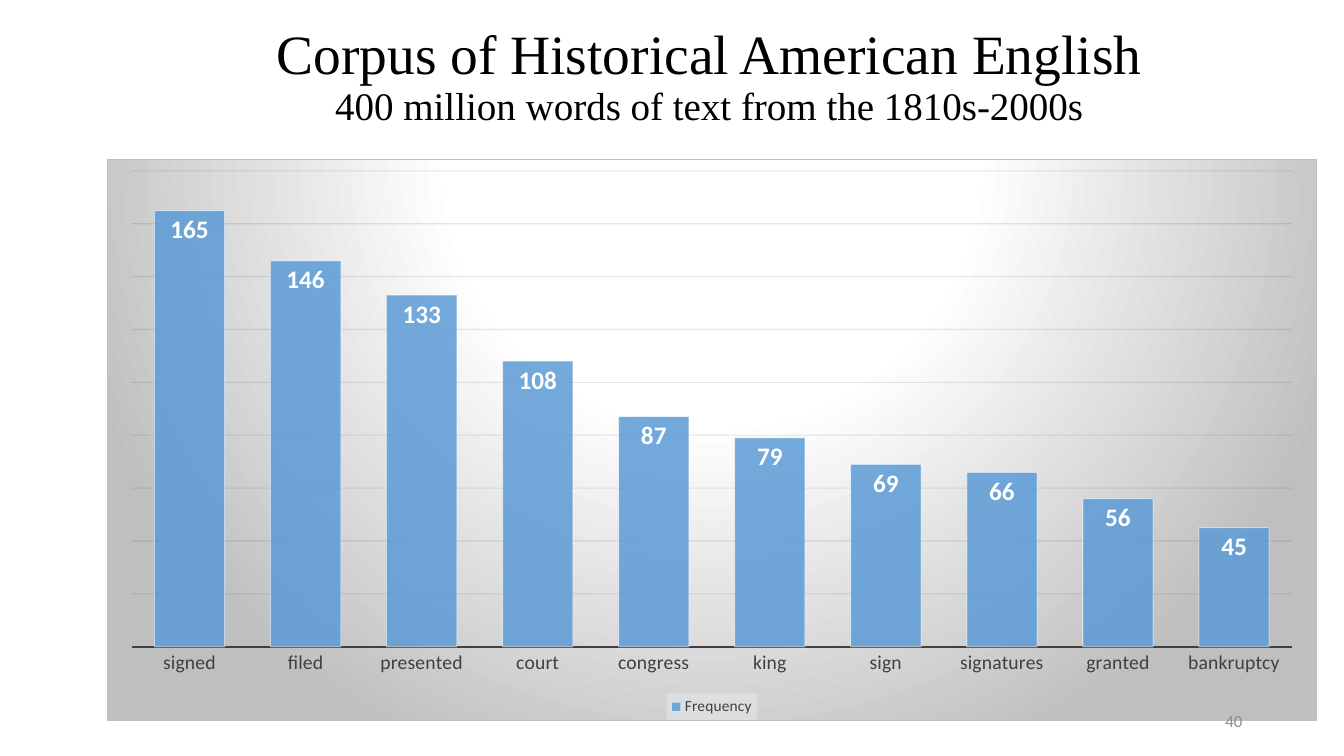
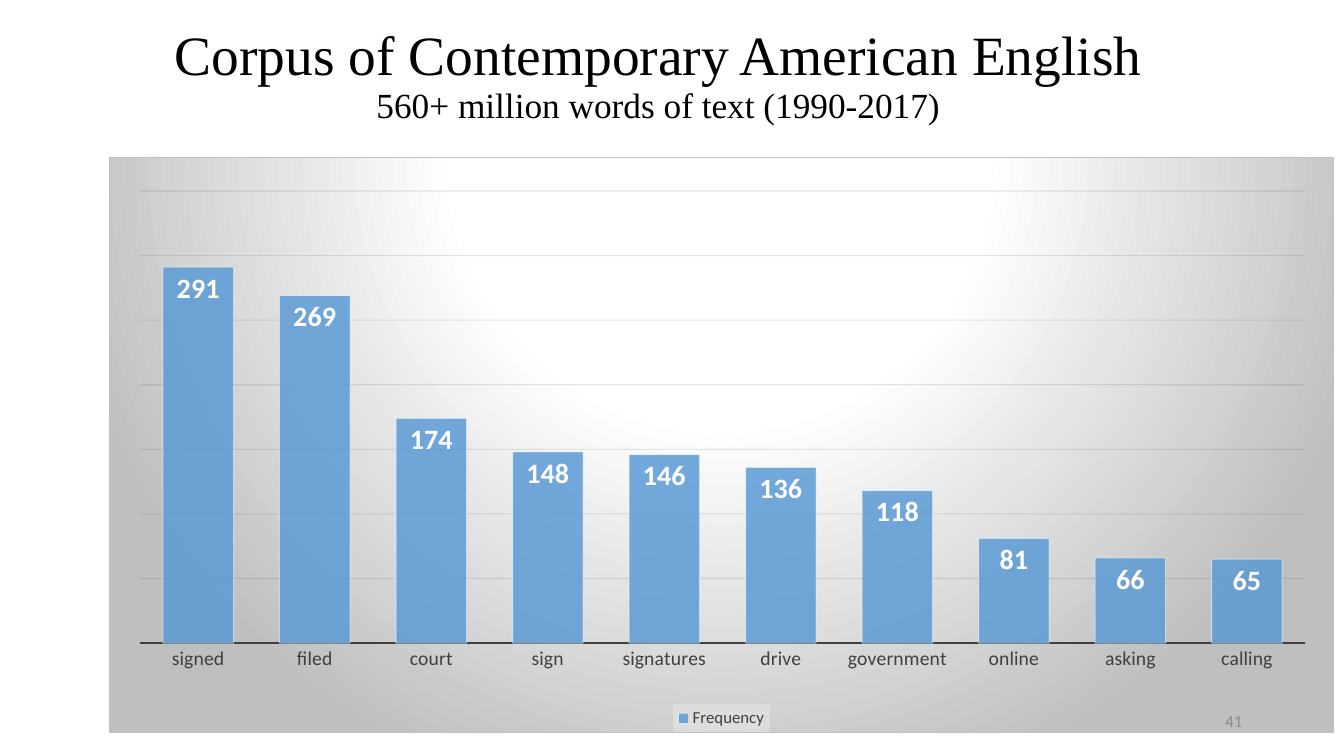
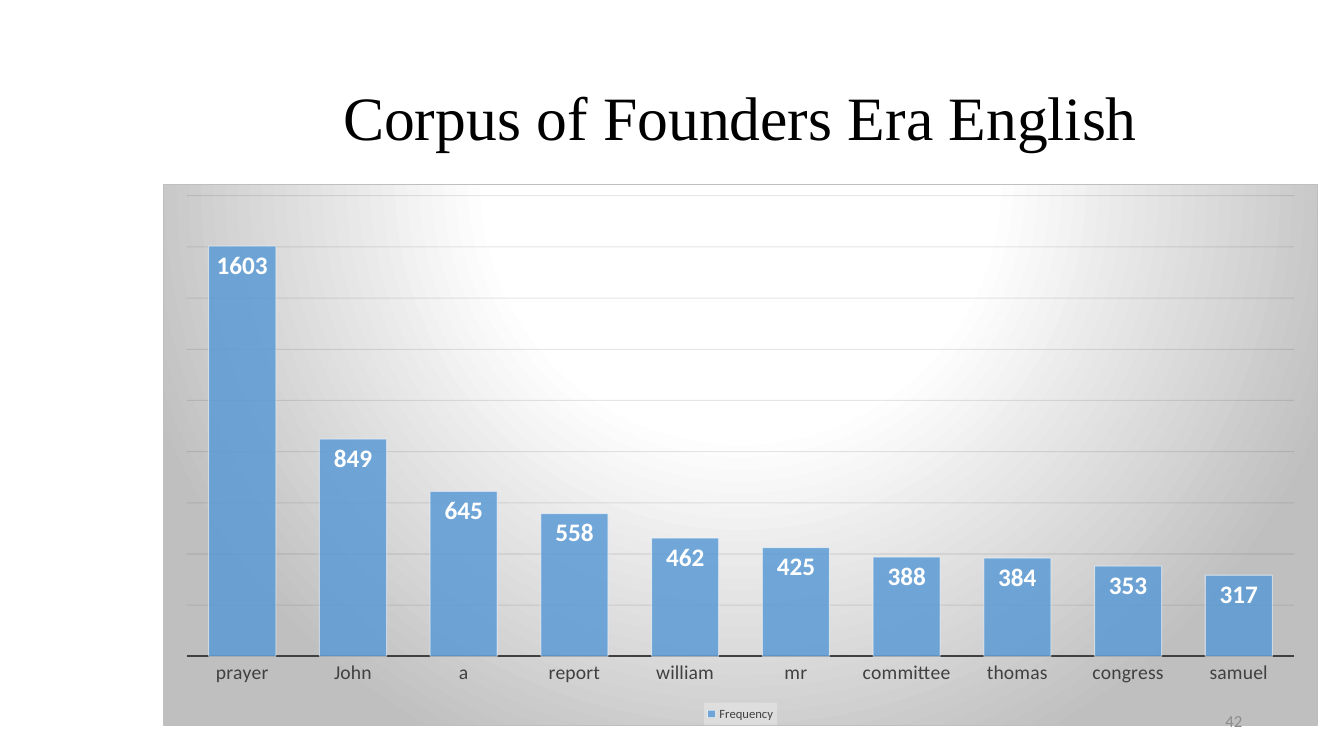
import pptx
import pptx.chart.data
import pptx.dml.color
import pptx.enum.chart
import pptx.enum.text
import pptx.oxml
import pptx.oxml.ns
import pptx.util

Inches, Pt = pptx.util.Inches, pptx.util.Pt
RGB = pptx.dml.color.RGBColor
ALIGN = pptx.enum.text.PP_ALIGN
ENUM = pptx.enum.chart

# Shared style
BLACK = RGB(0x00, 0x00, 0x00)
WHITE = RGB(0xFF, 0xFF, 0xFF)
BLUE = RGB(0x5B, 0x9B, 0xD5)
DARK = RGB(0x40, 0x40, 0x40)
GRID = RGB(0x0D, 0x0D, 0x0D)
GRAY = RGB(0x8C, 0x8C, 0x8C)
SERIF, SANS = "Times New Roman", "Calibri"
SPACES = pptx.oxml.ns.nsdecls("c", "a")

PANEL = f"""<c:spPr {SPACES}>
  <a:gradFill><a:gsLst>
    <a:gs pos="0"><a:srgbClr val="FFFFFF"/></a:gs>
    <a:gs pos="39000"><a:srgbClr val="FFFFFF"/></a:gs>
    <a:gs pos="100000"><a:srgbClr val="BFBFBF"/></a:gs>
  </a:gsLst><a:path path="circle">
    <a:fillToRect l="50000" t="-80000" r="50000" b="180000"/>
  </a:path></a:gradFill>
  <a:ln w="9525"><a:solidFill><a:srgbClr val="BFBFBF"/></a:solidFill></a:ln>
</c:spPr>"""

KEY = f"""<c:spPr {SPACES}><a:solidFill><a:srgbClr val="F2F2F2">
  <a:alpha val="39000"/></a:srgbClr></a:solidFill></c:spPr>"""

# Each slide: title lines with sizes, boxes, axis top and step, font sizes
PAGES = [
    dict(
        title=[("Corpus of Historical American English", 39.6),
               ("400 million words of text from the 1810s-2000s", 27.9)],
        head=(1.22, 0.21, 11.63, 1.13), box=(1.06, 1.58, 12, 5.57),
        top=180, step=20, key=11, label=18, plot=None,
        data={"signed": 165, "filed": 146, "presented": 133, "court": 108,
              "congress": 87, "king": 79, "sign": 69, "signatures": 66,
              "granted": 56, "bankruptcy": 45}),
    dict(
        title=[("Corpus of Contemporary American English", 39.6),
               ("560+ million words of text (1990-2017)", 25.2)],
        head=(0.47, 0.18, 12.12, 1.17), box=(1.08, 1.56, 12.15, 5.71),
        top=350, step=50, key=12, label=20,
        plot=dict(x=0.025, y=0.058, w=0.952, h=0.787),
        data={"signed": 291, "filed": 269, "court": 174, "sign": 148,
              "signatures": 146, "drive": 136, "government": 118,
              "online": 81, "asking": 66, "calling": 65}),
    dict(
        title=[("Corpus of Founders Era English", 44)],
        head=(2.47, 0.7, 9.75, 1), box=(1.62, 1.83, 11.45, 5.37),
        top=1800, step=200, key=9, label=18, plot=None,
        data={"prayer": 1603, "John": 849, "a": 645, "report": 558,
              "william": 462, "mr": 425, "committee": 388, "thomas": 384,
              "congress": 353, "samuel": 317}),
]


def add_text(slide, box, lines, align, face, color):
    frame = slide.shapes.add_textbox(*map(Inches, box)).text_frame
    frame.word_wrap = True
    frame.vertical_anchor = pptx.enum.text.MSO_ANCHOR.MIDDLE
    para = frame.paragraphs[0]
    para.alignment = align
    para.font.name = face
    para.font.color.rgb = color
    for i, (text, size) in enumerate(lines):
        if i:
            para.add_line_break()
        run = para.add_run()
        run.text = text
        run.font.size = Pt(size)
    return para


def fade(item, where, share):
    for color in item.xpath(where + "//a:srgbClr"):
        color.append(pptx.oxml.parse_xml(
            f'<a:alpha {SPACES} val="{share * 1000}"/>'))


deck = pptx.Presentation()
deck.slide_width, deck.slide_height = Inches(13.33), Inches(7.5)

for num, page in enumerate(PAGES, 40):
    slide = deck.slides.add_slide(deck.slide_layouts[6])

    # Title
    para = add_text(slide, page["head"], page["title"], ALIGN.CENTER,
                    SERIF, BLACK)
    para.line_spacing = 0.9

    # Chart and its panel
    data = pptx.chart.data.CategoryChartData()
    data.categories = list(page["data"])
    data.add_series("Frequency", list(page["data"].values()))
    chart = slide.shapes.add_chart(
        ENUM.XL_CHART_TYPE.COLUMN_CLUSTERED,
        *map(Inches, page["box"]), data).chart
    chart.has_title = False
    chart.font.name, chart.font.size = SANS, Pt(10)
    chart.font.color.rgb = BLACK
    root = chart.element
    root.xpath("c:chart")[0].addnext(pptx.oxml.parse_xml(PANEL))

    # Plot area
    if page["plot"]:
        rule = "".join(f'<c:{k} val="{v}"/>' for k, v in page["plot"].items())
        root.xpath("c:chart/c:plotArea")[0].insert(0, pptx.oxml.parse_xml(
            f'<c:layout {SPACES}><c:manualLayout>'
            '<c:layoutTarget val="inner"/>'
            '<c:xMode val="edge"/><c:yMode val="edge"/>'
            f'{rule}</c:manualLayout></c:layout>'))

    # Axes
    base = chart.category_axis
    base.major_tick_mark = ENUM.XL_TICK_MARK.NONE
    base.tick_labels.font.name = SANS
    base.tick_labels.font.size = Pt(14)
    base.tick_labels.font.color.rgb = DARK
    base.format.line.width = Pt(1.5)
    base.format.line.color.rgb = DARK
    scale = chart.value_axis
    scale.visible = False
    scale.minimum_scale, scale.maximum_scale = 0, page["top"]
    scale.major_unit = page["step"]
    grid = scale.major_gridlines.format.line
    grid.width = Pt(0.75)
    grid.color.rgb = GRID
    fade(root, ".//c:majorGridlines", 10)

    # Columns and labels
    plot = chart.plots[0]
    plot.gap_width = 65
    plot.vary_by_categories = False
    bars = plot.series[0].format
    bars.fill.solid()
    bars.fill.fore_color.rgb = BLUE
    bars.line.width = Pt(0.75)
    bars.line.color.rgb = WHITE
    fade(root, ".//c:ser/c:spPr/a:solidFill", 85)
    fade(root, ".//c:ser/c:spPr/a:ln", 50)
    plot.has_data_labels = True
    label = plot.data_labels
    label.show_value = True
    label.position = ENUM.XL_LABEL_POSITION.INSIDE_END
    label.font.name, label.font.size = SANS, Pt(page["label"])
    label.font.bold = True
    label.font.color.rgb = WHITE

    # Legend
    chart.has_legend = True
    key = chart.legend
    key.position = ENUM.XL_LEGEND_POSITION.BOTTOM
    key.include_in_layout = False
    key.font.name, key.font.size = SANS, Pt(page["key"])
    key.font.color.rgb = DARK
    root.xpath(".//c:legend/c:txPr")[0].addprevious(
        pptx.oxml.parse_xml(KEY))

    # Page number
    add_text(slide, (9.42, 6.95, 3, 0.4), [(str(num), 12)], ALIGN.RIGHT,
             SANS, GRAY)

deck.save("out.pptx")
